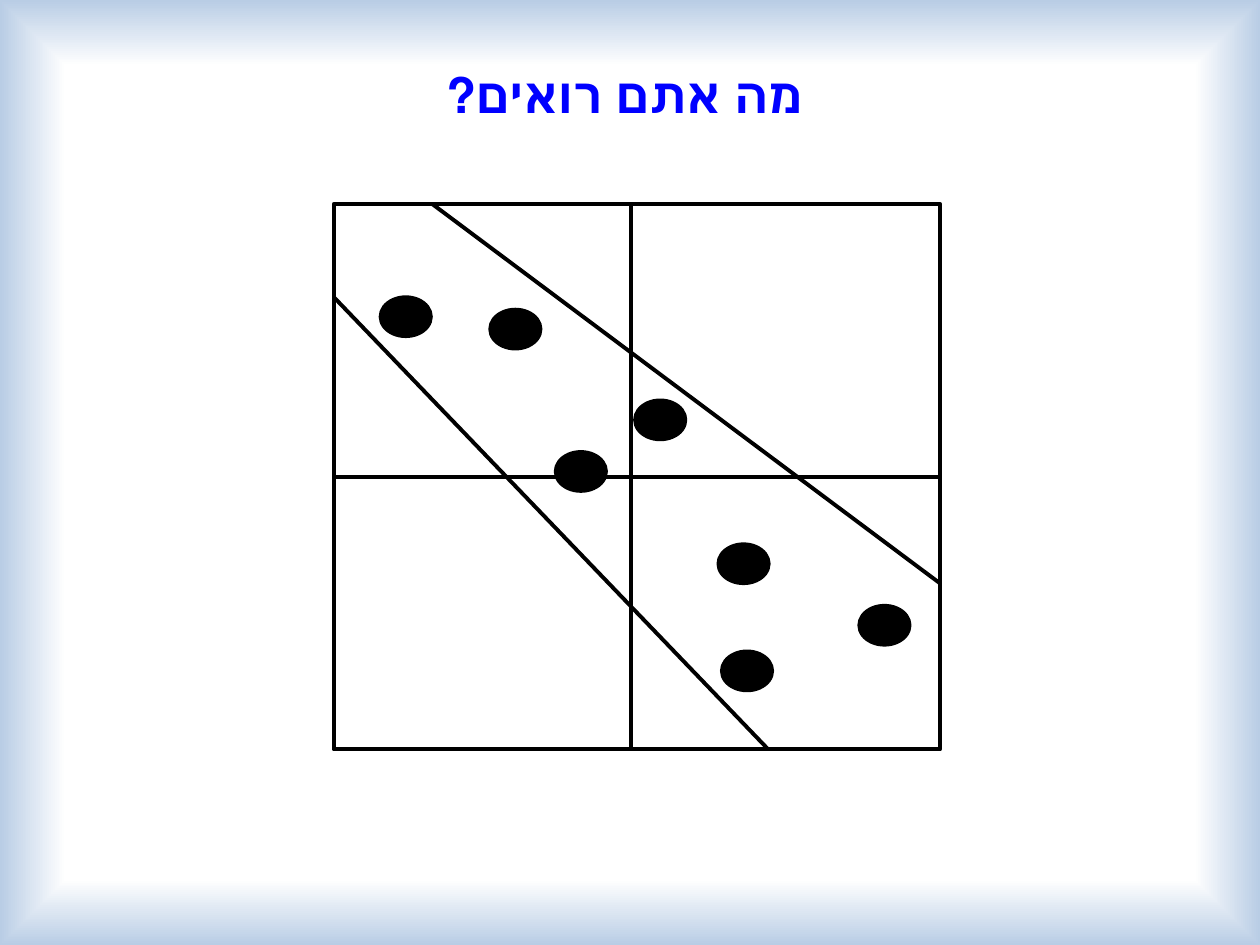
from lxml.etree import SubElement
from pptx import Presentation
from pptx.dml.color import RGBColor as Rgb
from pptx.enum.shapes import MSO_CONNECTOR as Link, MSO_SHAPE as Kind
from pptx.enum.text import MSO_ANCHOR as Anchor, MSO_AUTO_SIZE as Fit, PP_ALIGN as Align
from pptx.oxml.ns import qn
from pptx.util import Cm, Pt

COLORS = {"ink": "000000", "title": "0000FF", "white": "FFFFFF", "edge": "B9CDE5"}
DOTS = [(0.94, 1.88), (3.15, 2.13), (6.07, 3.96), (4.47, 5),
        (7.75, 6.86), (7.82, 9.02), (10.59, 8.1)]


def color(name):
    """Return the named colour."""
    return Rgb.from_string(COLORS[name])


def paint_back(slide):
    """Fill the background with white that fades to blue at the edges."""
    fill = slide.background.fill
    fill.gradient()
    for stop, place, name in zip(fill.gradient_stops, (0.86, 1), ("white", "edge")):
        stop.position = place
        stop.color.rgb = color(name)
    grad = slide.element.find(".//" + qn("a:gradFill"))
    grad.remove(grad.find(qn("a:lin")))
    way = SubElement(grad, qn("a:path"), {"path": "rect"})
    SubElement(way, qn("a:fillToRect"), {side: "50000" for side in "ltrb"})


def add_title(slide, text, left, top, width, height):
    """Set the outlined right-to-left title in its box."""
    title = slide.shapes.title
    title.left, title.top, title.width, title.height = map(Cm, (left, top, width, height))
    frame = title.text_frame
    frame.text = text
    frame.vertical_anchor = Anchor.TOP
    frame.auto_size = Fit.SHAPE_TO_FIT_TEXT
    para = frame.paragraphs[0]
    para.alignment = Align.CENTER
    font = para.font
    font.name, font.size, font.bold = "Calibri", Pt(28), True
    font.color.rgb = color("title")
    para._p.get_or_add_pPr().set("rtl", "1")
    props = para.runs[0]._r.get_or_add_rPr()
    line = SubElement(props, qn("a:ln"), {"w": str(Pt(0.9))})
    solid = SubElement(line, qn("a:solidFill"))
    SubElement(solid, qn("a:srgbClr"), {"val": COLORS["title"]})


def add_board(slide, left, top, width, height):
    """Draw the framed board with its lines and dots."""
    group = slide.shapes.add_group_shape().shapes

    def add_form(kind, x, y, w, h, thick):
        """Add a black-lined shape at a place on the board."""
        form = group.add_shape(kind, Cm(left + x), Cm(top + y), Cm(w), Cm(h))
        form.shadow.inherit = False
        form.fill.background()
        form.line.color.rgb = color("ink")
        form.line.width = Pt(thick)
        return form

    def add_line(x1, y1, x2, y2):
        """Add a line between two places on the board."""
        line = group.add_connector(Link.STRAIGHT, Cm(left + x1), Cm(top + y1),
                                   Cm(left + x2), Cm(top + y2))
        line.line.color.rgb = color("ink")
        line.line.width = Pt(2.25)
        SubElement(line._element.spPr, qn("a:effectLst"))
        return line

    frame = add_form(Kind.RECTANGLE, 0, 0, width, height, 2.25)
    add_line(5.99, 0, 5.99, height)
    level = add_line(0, height / 2, width, height / 2)
    level.begin_connect(frame, 1)
    level.end_connect(frame, 3)
    add_line(width, 7.65, 1.98, 0)
    add_line(8.76, height, 0, 1.88)
    for x, y in DOTS:
        dot = add_form(Kind.OVAL, x, y, 1.02, 0.79, 2)
        dot.fill.solid()
        dot.fill.fore_color.rgb = color("ink")


def main():
    """Build and save the slide."""
    deck = Presentation()
    deck.slide_width, deck.slide_height = Cm(25.4), Cm(19.05)
    slide = deck.slides.add_slide(deck.slide_layouts[5])
    paint_back(slide)
    add_title(slide, "מה אתם רואים?", 8.71, 1.17, 7.75, 1.45)
    add_board(slide, 6.73, 4.11, 12.22, 11)
    deck.save("out.pptx")


if __name__ == "__main__":
    main()
